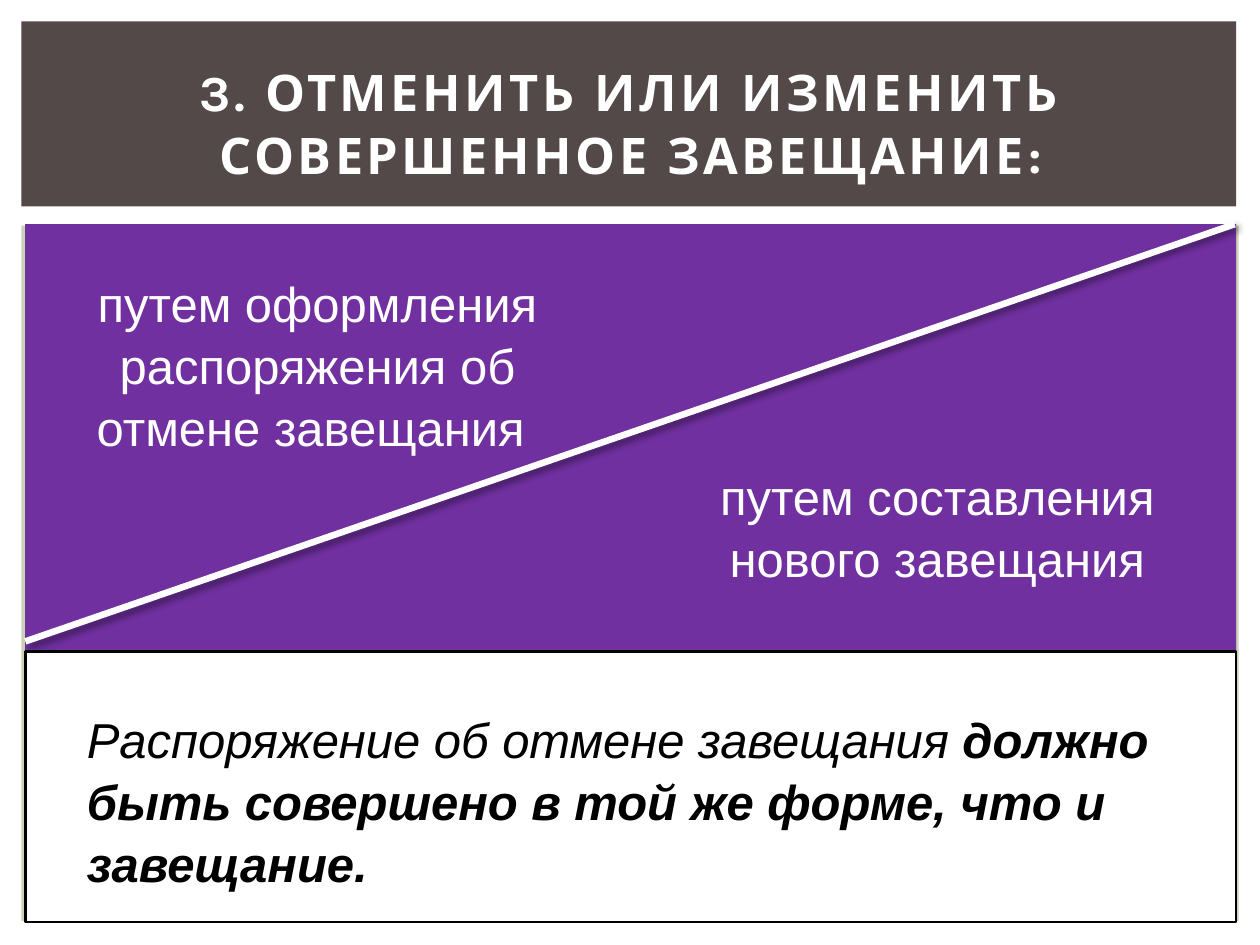
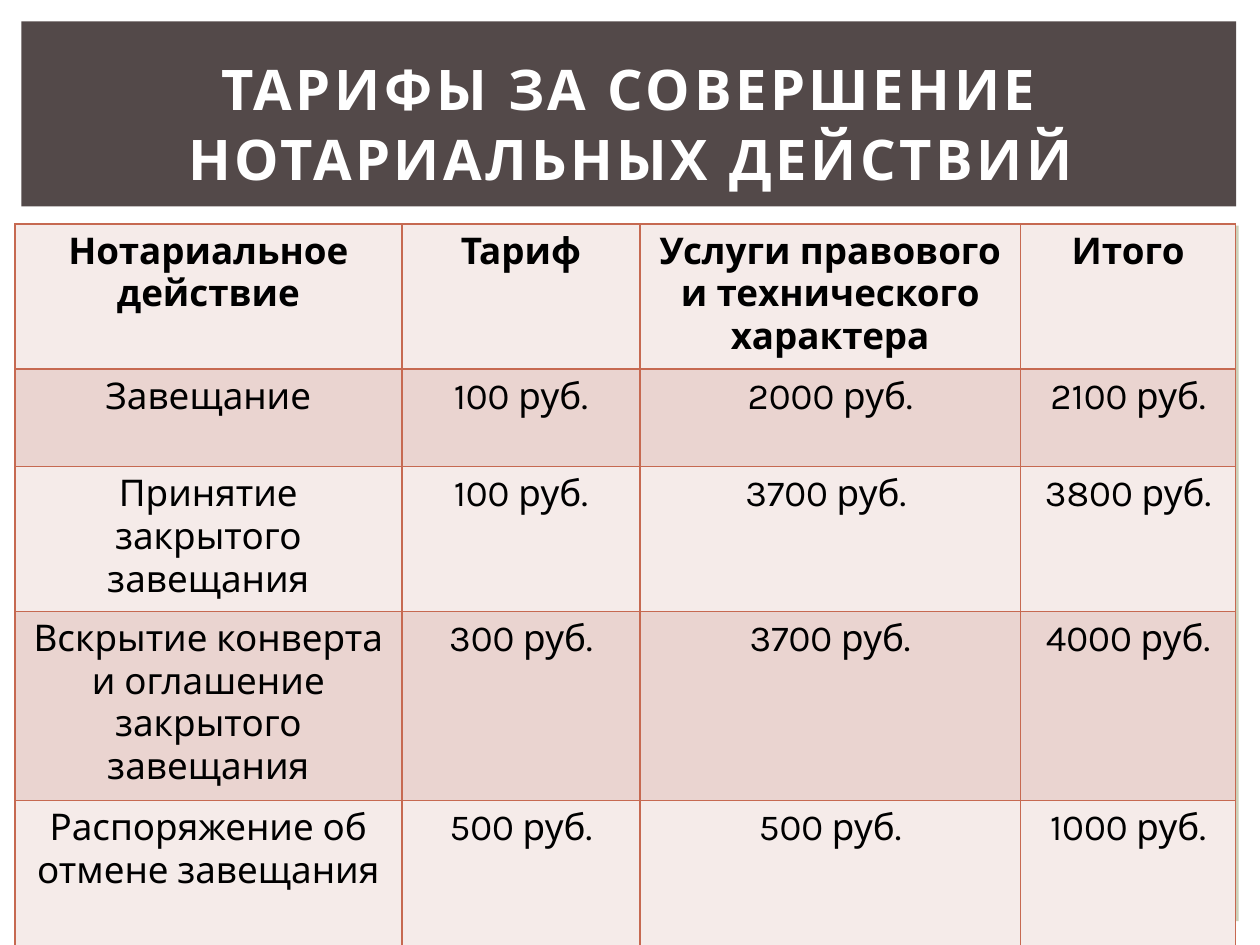
from lxml import etree
from pptx import Presentation
from pptx.dml.color import RGBColor
from pptx.enum.shapes import MSO_CONNECTOR, MSO_SHAPE
from pptx.enum.text import MSO_ANCHOR, PP_ALIGN
from pptx.oxml import parse_xml
from pptx.oxml.ns import qn
from pptx.util import Cm, Pt

RECTANGLE = MSO_SHAPE.RECTANGLE
STRAIGHT = MSO_CONNECTOR.STRAIGHT
CENTER = PP_ALIGN.CENTER
LEFT = PP_ALIGN.LEFT
MIDDLE = MSO_ANCHOR.MIDDLE
TOP = MSO_ANCHOR.TOP

WHITE = RGBColor(0xFF, 0xFF, 0xFF)
BLACK = RGBColor(0x00, 0x00, 0x00)
SAGE = RGBColor(0xCC, 0xD1, 0xB9)
BROWN = RGBColor(0x53, 0x49, 0x49)
PURPLE = RGBColor(0x70, 0x30, 0xA0)
RUST = RGBColor(0xC6, 0x69, 0x51)
LIGHT_PINK = RGBColor(0xF5, 0xEB, 0xE9)
DARK_PINK = RGBColor(0xEA, 0xD4, 0xD0)

TITLE_FONT = "Karla"
BODY_FONT = "Arial"
BODY_SIZE = 28
TABLE_SIZE = 21
LINE_SPACING = 1.05
DRAWING = "http://schemas.openxmlformats.org/drawingml/2006/main"

COLUMN_WIDTHS = (7.8, 4.8, 7.67, 4.34)
ROW_HEIGHTS = (2.82, 1.96, 2.59, 3.38, 3.25)
TARIFFS = (
    ("Нотариальное действие", "Тариф",
     "Услуги правового и технического характера", "Итого"),
    ("Завещание", "100 руб.", "2000 руб.", "2100 руб."),
    ("Принятие закрытого завещания", "100 руб.", "3700 руб. ", "3800 руб."),
    ("Вскрытие конверта и оглашение закрытого завещания",
     "300 руб.", "3700 руб.", "4000 руб."),
    ("Распоряжение об отмене завещания", "500 руб.", "500 руб.", "1000 руб."),
)


def add_span(para, text, font, size, color, bold=False, italic=False):
    span = para.add_run()
    span.text = text
    span.font.name = font
    span.font.size = Pt(size)
    span.font.color.rgb = color
    span.font.bold = bold
    span.font.italic = italic
    return span


def add_rectangle(page, left, top, width, height, fill, outline=None):
    box = page.shapes.add_shape(RECTANGLE, Cm(left), Cm(top), Cm(width), Cm(height))
    box.shadow.inherit = False
    box.fill.solid()
    box.fill.fore_color.rgb = fill
    if outline is None:
        box.line.fill.background()
    else:
        box.line.color.rgb = outline
        box.line.width = Pt(1.5)


def add_text_para(page, left, top, width, height, align=CENTER, anchor=TOP):
    box = page.shapes.add_textbox(Cm(left), Cm(top), Cm(width), Cm(height))
    box.text_frame.word_wrap = True
    box.text_frame.vertical_anchor = anchor
    para = box.text_frame.paragraphs[0]
    para.alignment = align
    para.line_spacing = LINE_SPACING
    return para


def add_titled_page(deck, title, size):
    page = deck.slides.add_slide(deck.slide_layouts[6])
    add_rectangle(page, 0.43, 4.55, 24.54, 14.02, SAGE)
    add_rectangle(page, 0.43, 0.43, 24.49, 3.73, BROWN)
    para = add_text_para(page, 1.07, 0.99, 23.29, 2.92, anchor=MIDDLE)
    span = add_span(para, title, TITLE_FONT, size, WHITE, bold=True)
    span.font._element.set("spc", "200")
    return page


def add_divider(page, x1, y1, x2, y2):
    divider = page.shapes.add_connector(STRAIGHT, Cm(x1), Cm(y1), Cm(x2), Cm(y2))
    divider.line.color.rgb = WHITE
    divider.line.width = Pt(3.75)
    divider._element.spPr.append(parse_xml(
        f'<a:effectLst xmlns:a="{DRAWING}">'
        f'<a:outerShdw blurRad="{Pt(4)}" dist="{Pt(3)}" dir="2700000">'
        f'<a:srgbClr val="{BLACK}"><a:alpha val="40000"/></a:srgbClr>'
        '</a:outerShdw></a:effectLst>'))


def set_borders(cell, color):
    properties = cell._tc.get_or_add_tcPr()
    for position, side in enumerate(("lnL", "lnR", "lnT", "lnB")):
        border = etree.Element(qn(f"a:{side}"), w=str(Pt(1)))
        fill = etree.SubElement(border, qn("a:solidFill"))
        etree.SubElement(fill, qn("a:srgbClr"), val=str(color))
        properties.insert(position, border)


def add_tariff_table(page, left, top):
    table = page.shapes.add_table(
        len(TARIFFS), len(COLUMN_WIDTHS), Cm(left), Cm(top),
        Cm(sum(COLUMN_WIDTHS)), Cm(sum(ROW_HEIGHTS))).table
    table.first_row = False
    table.horz_banding = False
    for column, width in zip(table.columns, COLUMN_WIDTHS):
        column.width = Cm(width)
    for number, (row, height, texts) in enumerate(zip(table.rows, ROW_HEIGHTS, TARIFFS)):
        row.height = Cm(height)
        for cell, text in zip(row.cells, texts):
            cell.fill.solid()
            cell.fill.fore_color.rgb = DARK_PINK if number % 2 else LIGHT_PINK
            set_borders(cell, RUST)
            para = cell.text_frame.paragraphs[0]
            para.alignment = CENTER
            add_span(para, text, TITLE_FONT, TABLE_SIZE, BLACK, bold=number == 0)


def build_cancel_page(deck):
    page = add_titled_page(deck, "3. ОТМЕНИТЬ ИЛИ ИЗМЕНИТЬ СОВЕРШЕННОЕ ЗАВЕЩАНИЕ:", 28.8)
    add_rectangle(page, 0.51, 4.52, 24.41, 8.61, PURPLE)
    add_rectangle(page, 0.51, 13.13, 24.41, 5.46, WHITE, BLACK)
    note = add_text_para(page, 1.5, 14.12, 22.4, 3.84, align=LEFT)
    add_span(note, "Распоряжение об отмене завещания ",
             BODY_FONT, BODY_SIZE, BLACK, italic=True)
    add_span(note, "должно быть совершено в той же форме, что и завещание.",
             BODY_FONT, BODY_SIZE, BLACK, bold=True, italic=True)
    add_divider(page, 0.51, 12.93, 24.89, 4.52)
    for text, place in (
        ("путем оформления распоряжения об отмене завещания ", (1.5, 5.33, 9.8, 3.84)),
        ("путем составления нового завещания", (13.69, 9.22, 10.41, 2.64)),
    ):
        add_span(add_text_para(page, *place), text, BODY_FONT, BODY_SIZE, WHITE)


def build_tariff_page(deck):
    page = add_titled_page(deck, "ТАРИФЫ ЗА СОВЕРШЕНИЕ НОТАРИАЛЬНЫХ ДЕЙСТВИЙ", 32)
    add_tariff_table(page, 0.3, 4.52)


def main():
    deck = Presentation()
    deck.slide_width = Cm(25.4)
    deck.slide_height = Cm(19.05)
    build_cancel_page(deck)
    build_tariff_page(deck)
    deck.save("out.pptx")


if __name__ == "__main__":
    main()
